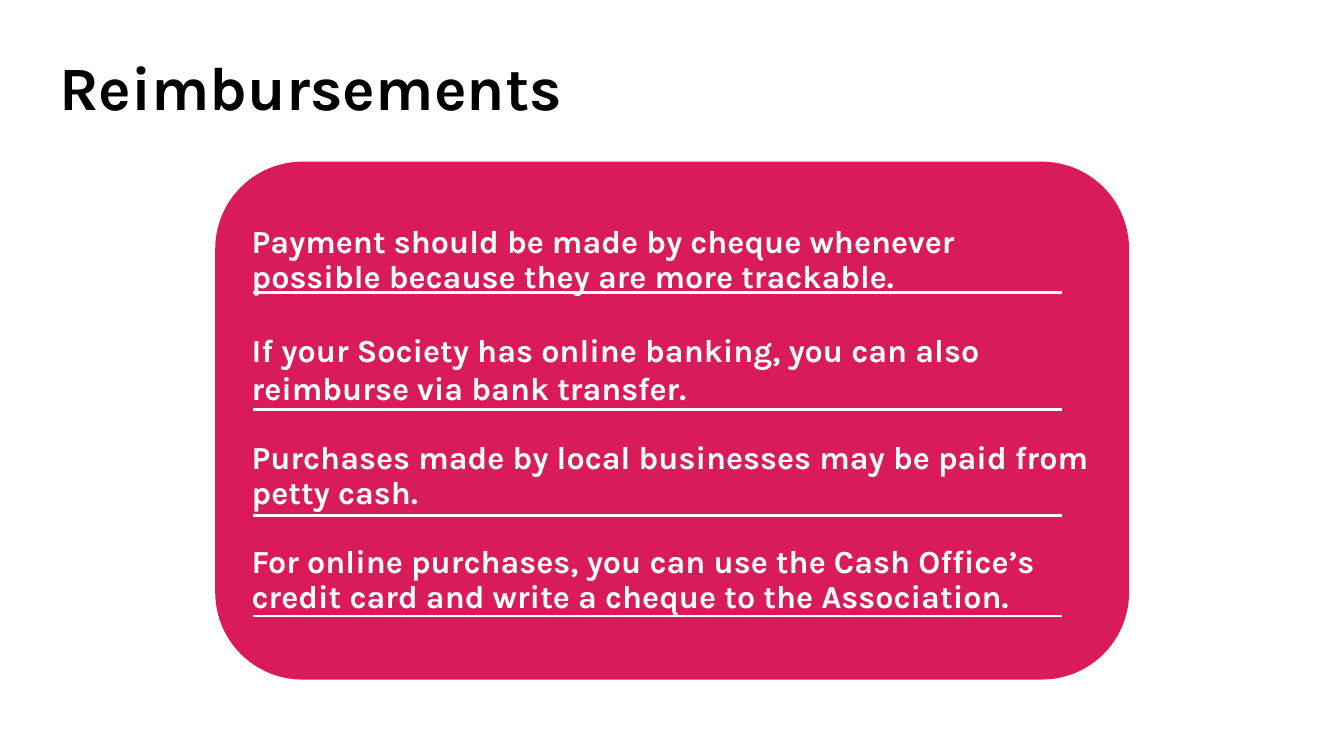
from lxml.etree import SubElement
from pptx import Presentation
from pptx.dml.color import RGBColor
from pptx.enum.shapes import MSO_CONNECTOR, MSO_SHAPE
from pptx.enum.text import MSO_ANCHOR, PP_ALIGN
from pptx.oxml.ns import qn
from pptx.util import Cm, Pt

COLORS = {"title": "000000", "panel": "D91B5A", "light": "FFFFFF"}
FONT = "Karla"
RULE_LEFT, RULE_RIGHT = 6.38, 26.77
ADVICE = [
    ("Payment should be made by cheque whenever possible because they are more trackable.", 0.9, 7.37),
    ("If your Society has online banking, you can also reimburse via bank transfer.", 1.0, 10.31),
    ("Purchases made by local businesses may be paid from petty cash.", 0.9, 12.98),
    ("For online purchases, you can use the Cash Office’s credit card and write a cheque to the Association.", 0.9, 15.52),
]


def color(name):
    return RGBColor.from_string(COLORS[name])


def write_paragraph(para, text, size, color_name, line_spacing):
    para.text = text
    para.alignment = PP_ALIGN.LEFT
    para.line_spacing = line_spacing
    for span in para.runs:
        span.font.name = FONT
        span.font.size = Pt(size)
        span.font.bold = True
        span.font.color.rgb = color(color_name)


def add_title(page, text):
    box = page.shapes.add_textbox(Cm(1.24), Cm(0.43), Cm(19), Cm(3.68))
    frame = box.text_frame
    frame.word_wrap = True
    frame.vertical_anchor = MSO_ANCHOR.MIDDLE
    write_paragraph(frame.paragraphs[0], text, 44, "title", 0.9)


def add_panel(page, advice):
    panel = page.shapes.add_shape(
        MSO_SHAPE.ROUNDED_RECTANGLE, Cm(5.46), Cm(4.11), Cm(22.96), Cm(12.98)
    )
    panel.shadow.inherit = False
    panel.fill.solid()
    panel.fill.fore_color.rgb = color("panel")
    panel.line.color.rgb = color("panel")
    panel.line.width = Pt(2)
    frame = panel.text_frame
    frame.word_wrap = True
    frame.vertical_anchor = MSO_ANCHOR.MIDDLE
    for index, (text, line_spacing, _) in enumerate(advice):
        para = frame.add_paragraph() if index else frame.paragraphs[0]
        write_paragraph(para, text, 23, "light", line_spacing)
        if index:
            para.space_before = Pt(24.7)


def add_rule(page, top):
    rule = page.shapes.add_connector(
        MSO_CONNECTOR.STRAIGHT, Cm(RULE_LEFT), Cm(top), Cm(RULE_RIGHT), Cm(top)
    )
    rule.line.color.rgb = color("light")
    rule.line.width = Pt(2)
    SubElement(rule._element.spPr, qn("a:effectLst"))


def main():
    deck = Presentation()
    deck.slide_width, deck.slide_height = Cm(33.87), Cm(19.05)
    page = deck.slides.add_slide(deck.slide_layouts[6])
    add_title(page, "Reimbursements")
    add_panel(page, ADVICE)
    for _, _, rule_top in ADVICE:
        add_rule(page, rule_top)
    deck.save("out.pptx")


if __name__ == "__main__":
    main()
